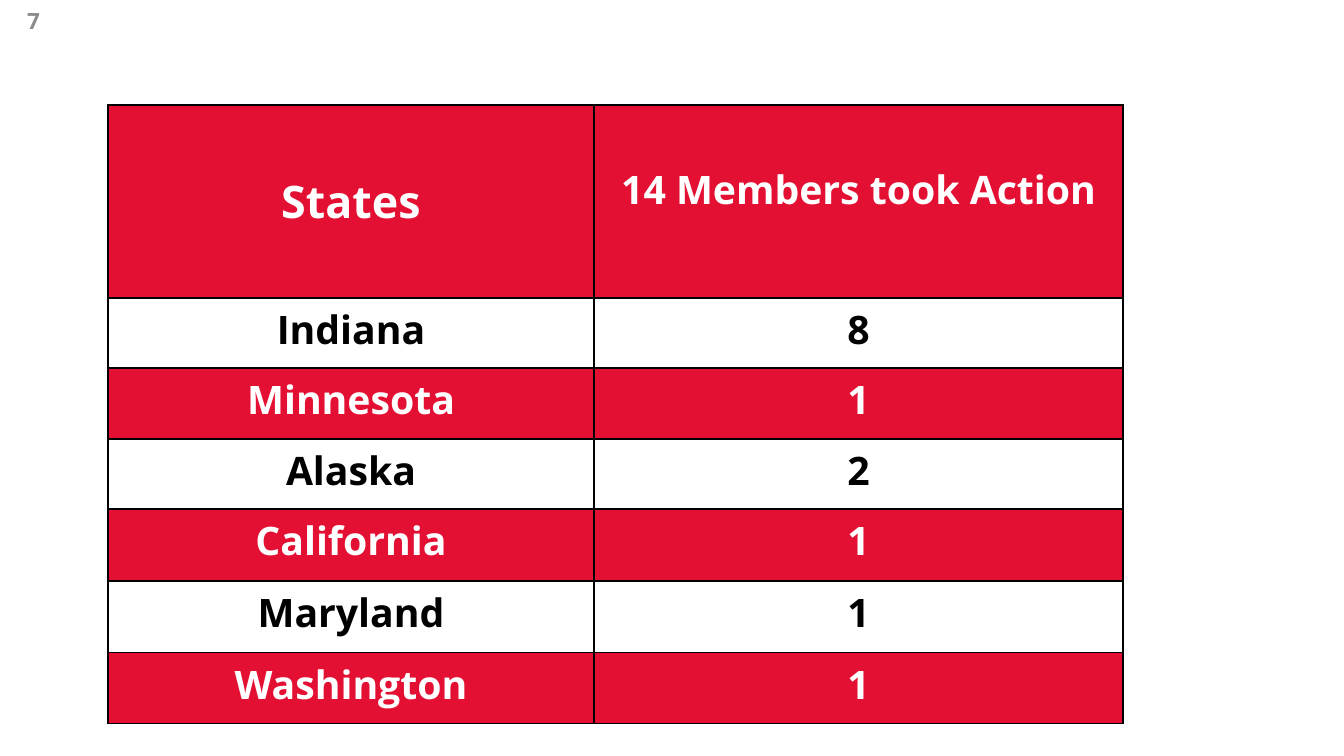
import pptx
import pptx.dml.color
import pptx.enum.text
import pptx.oxml
import pptx.oxml.ns
import pptx.util

RGBColor = pptx.dml.color.RGBColor
Pt = pptx.util.Pt
PX = 914400 / 100.8
RED = RGBColor(0xE4, 0x10, 0x34)
WHITE = RGBColor(0xFF, 0xFF, 0xFF)
BLACK = RGBColor(0x00, 0x00, 0x00)
GRAY = RGBColor(0x8C, 0x8C, 0x8C)
CENTER = pptx.enum.text.PP_ALIGN.CENTER
MIDDLE = pptx.enum.text.MSO_ANCHOR.MIDDLE


def px(n):
    return round(n * PX)


def write(tf, text, size, color):
    """Put one centred bold run into a text frame."""
    p = tf.paragraphs[0]
    p.alignment = CENTER
    r = p.add_run()
    r.text = text
    r.font.color.rgb = color
    for name, value in {"name": "Open Sans", "size": Pt(size), "bold": True}.items():
        setattr(r.font, name, value)


prs = pptx.Presentation()
prs.slide_width, prs.slide_height = px(1344), px(756)
s = prs.slides.add_slide(prs.slide_layouts[6])

# Table of members by state
rows = [
    ("States", "14 Members took Action"),
    ("Indiana", "8"),
    ("Minnesota", "1"),
    ("Alaska", "2"),
    ("California", "1"),
    ("Maryland", "1"),
    ("Washington", "1"),
]
col_widths = [486, 529]
row_heights = [193, 70, 71, 70, 72, 72, 71]
header_sizes = [32, 28]
header_tops = [66, 58]

table = s.shapes.add_table(
    len(rows), len(col_widths), px(108), px(105), px(sum(col_widths)), px(sum(row_heights))
).table
for column, width in zip(table.columns, col_widths):
    column.width = px(width)

for i, (values, height) in enumerate(zip(rows, row_heights)):
    table.rows[i].height = px(height)
    fill, color = (WHITE, BLACK) if i % 2 else (RED, WHITE)
    for j, text in enumerate(values):
        cell = table.cell(i, j)
        tcPr = cell._tc.get_or_add_tcPr()
        for side in ("lnL", "lnR", "lnT", "lnB"):
            tcPr.append(pptx.oxml.parse_xml(
                f'<a:{side} {pptx.oxml.ns.nsdecls("a")} w="12700"><a:solidFill>'
                f'<a:srgbClr val="{BLACK}"/></a:solidFill></a:{side}>'))
        cell.fill.solid()
        cell.fill.fore_color.rgb = fill
        if i == 0:
            cell.margin_top = px(header_tops[j])
        write(cell.text_frame, text, 28 if i else header_sizes[j], color)

# Page number
tf = s.shapes.add_textbox(0, px(1), px(67), px(40)).text_frame
tf.word_wrap = True
tf.vertical_anchor = MIDDLE
write(tf, "7", 16, GRAY)

prs.save("out.pptx")
